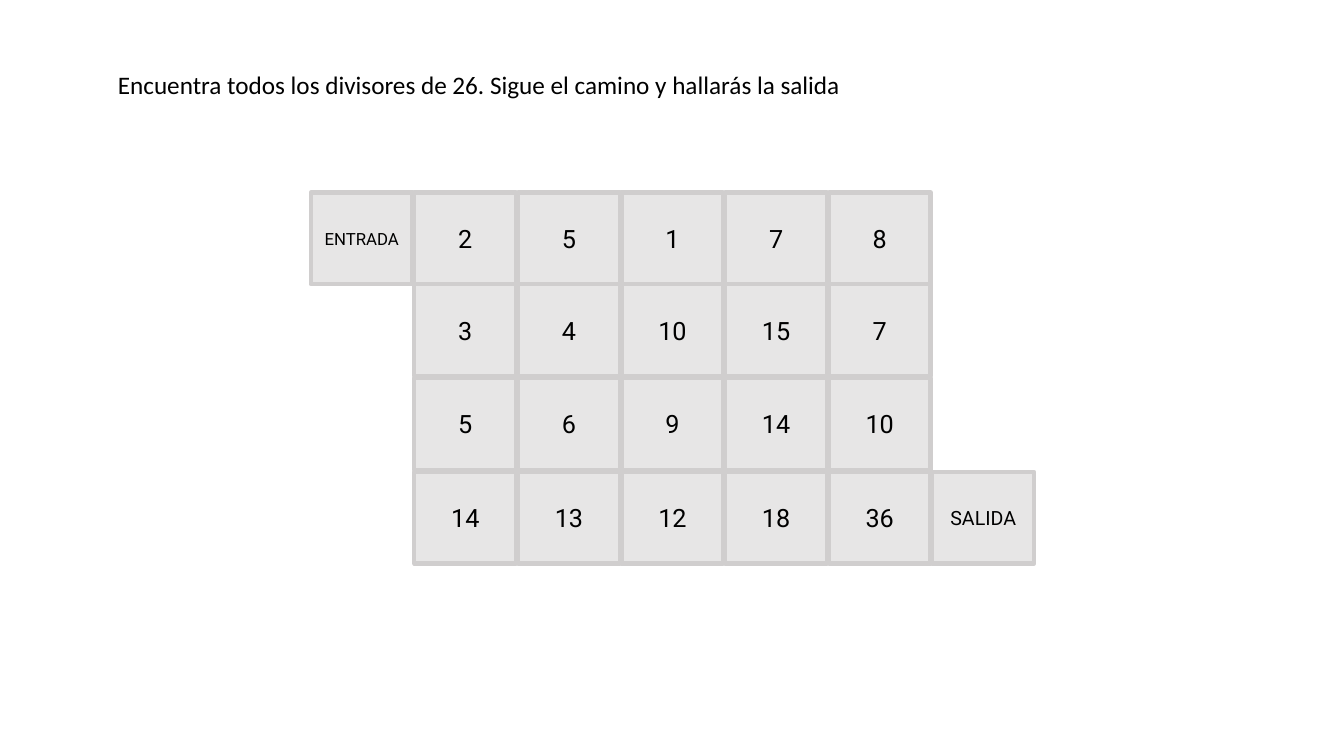
from pptx import Presentation
from pptx.dml.color import RGBColor
from pptx.enum.shapes import MSO_SHAPE
from pptx.enum.text import MSO_ANCHOR, MSO_AUTO_SIZE, PP_ALIGN
from pptx.util import Pt

TITLE = "Encuentra todos los divisores de 26. Sigue el camino y hallarás la salida"
MAZE = [
    ["ENTRADA", "2", "5", "1", "7", "8"],
    [None, "3", "4", "10", "15", "7"],
    [None, "5", "6", "9", "14", "10"],
    [None, "14", "13", "12", "18", "36", "SALIDA"],
]
LABEL_SIZES = {"ENTRADA": 12, "SALIDA": 14}
NUMBER_SIZE = 18

MAZE_LEFT = 222
COLUMN_STEP = 74
ROW_TOPS = [137.5, 203, 270, 337]
CELL_WIDTH, CELL_HEIGHT = 72.7, 65.5

BLACK = RGBColor(0x00, 0x00, 0x00)
CELL_FILL = RGBColor(0xE7, 0xE6, 0xE6)
CELL_BORDER = RGBColor(0xD0, 0xCE, 0xCE)
RECTANGLE = MSO_SHAPE.RECTANGLE
MIDDLE, TOP = MSO_ANCHOR.MIDDLE, MSO_ANCHOR.TOP
CENTER, LEFT = PP_ALIGN.CENTER, PP_ALIGN.LEFT
GROW = MSO_AUTO_SIZE.SHAPE_TO_FIT_TEXT


def write(frame, text, font_name, size, alignment, anchor):
    frame.text = text
    frame.word_wrap = True
    frame.vertical_anchor = anchor
    para = frame.paragraphs[0]
    para.alignment = alignment
    font = para.runs[0].font
    font.name = font_name
    font.size = Pt(size)
    font.color.rgb = BLACK


def add_cell(maze, text, left, top):
    cell = maze.shapes.add_shape(
        RECTANGLE, Pt(left), Pt(top), Pt(CELL_WIDTH), Pt(CELL_HEIGHT))
    cell.shadow.inherit = False
    cell.fill.solid()
    cell.fill.fore_color.rgb = CELL_FILL
    cell.line.color.rgb = CELL_BORDER
    cell.line.width = Pt(3)
    size = LABEL_SIZES.get(text, NUMBER_SIZE)
    write(cell.text_frame, text, "Roboto", size, CENTER, MIDDLE)


def main():
    deck = Presentation()
    deck.slide_width, deck.slide_height = Pt(960), Pt(540)
    page = deck.slides.add_slide(deck.slide_layouts[5])

    title = page.shapes.title
    title.left, title.top = Pt(77), Pt(46)
    title.width, title.height = Pt(603.4), Pt(29)
    write(title.text_frame, TITLE, "Calibri", 18, LEFT, TOP)
    title.text_frame.auto_size = GROW

    maze = page.shapes.add_group_shape()
    for top, row in zip(ROW_TOPS, MAZE):
        for column, text in enumerate(row):
            if text:
                add_cell(maze, text, MAZE_LEFT + column * COLUMN_STEP, top)

    deck.save("out.pptx")


if __name__ == "__main__":
    main()
